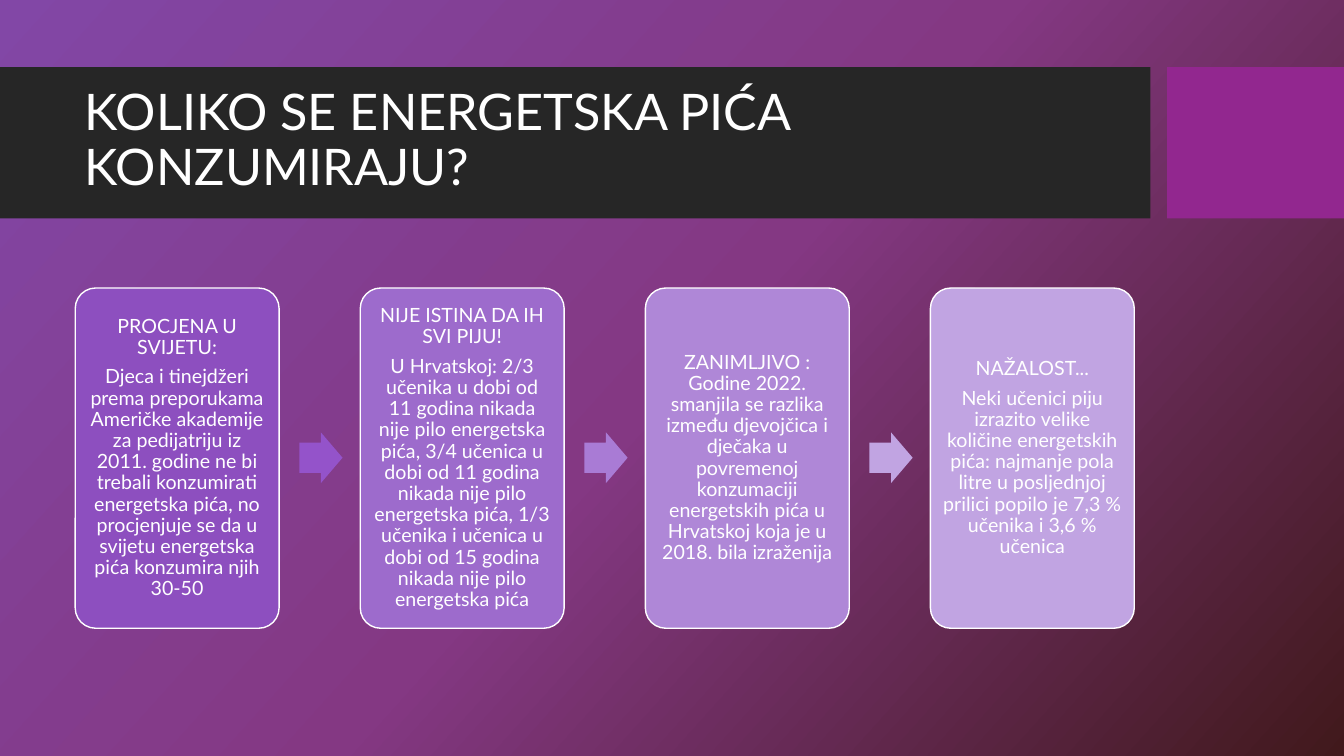
from copy import deepcopy

from pptx import Presentation
from pptx.dml.color import RGBColor
from pptx.enum.shapes import MSO_SHAPE
from pptx.enum.text import MSO_ANCHOR, MSO_AUTO_SIZE, PP_ALIGN
from pptx.oxml.ns import qn
from pptx.util import Inches, Pt

RECT, ROUND = MSO_SHAPE.RECTANGLE, MSO_SHAPE.ROUNDED_RECTANGLE
ARROW = MSO_SHAPE.RIGHT_ARROW
MIDDLE, FIXED = MSO_ANCHOR.MIDDLE, MSO_AUTO_SIZE.NONE
LEFT, CENTER = PP_ALIGN.LEFT, PP_ALIGN.CENTER

FIRST, PITCH, WIDE = 5.6, 21.21, 15.17
CARDS = [
    ("8D4FBF", ["PROCJENA U SVIJETU:",
                "Djeca i tinejdžeri prema preporukama Američke akademije za pedijatriju "
                "iz 2011. godine ne bi trebali konzumirati energetska pića, no procjenjuje "
                "se da u svijetu energetska pića konzumira njih 30-50"]),
    ("9D6BCC", ["NIJE ISTINA DA IH SVI PIJU!",
                "U Hrvatskoj: 2/3 učenika u dobi od 11 godina nikada nije pilo energetska "
                "pića, 3/4 učenica u dobi od 11 godina nikada nije pilo energetska pića, "
                "1/3 učenika i učenica u dobi od 15 godina nikada nije pilo energetska pića"]),
    ("AF87D7", ["ZANIMLJIVO : Godine 2022. smanjila se razlika između djevojčica i dječaka "
                "u povremenoj konzumaciji energetskih pića u Hrvatskoj koja je u 2018. "
                "bila izraženija"]),
    ("C1A4E2", ["NAŽALOST...",
                "Neki učenici piju izrazito velike količine energetskih pića: najmanje pola "
                "litre u posljednjoj prilici popilo je 7,3 % učenika i 3,6 % učenica"]),
]
ARROWS = ["9453CA", "A97BD5", "C1A4E2"]


def tint(code):
    return RGBColor.from_string(code)


class Deck:
    """Holds the style and the current slide; places are percent of its size."""

    font, ink = "Lato", "FFFFFF"

    def __init__(self):
        self.file = Presentation()
        self.file.slide_width, self.file.slide_height = Inches(13.33), Inches(7.5)
        self.slide = self.file.slides.add_slide(self.file.slide_layouts[5])

    def area(self, x, y, w, h):
        wide, high = self.file.slide_width, self.file.slide_height
        return [int(part * full / 100)
                for part, full in zip((x, y, w, h), (wide, high, wide, high))]

    def ground(self, angle, codes):
        fill = self.slide.background.fill
        fill.gradient()
        fill.gradient_angle = 360 - angle
        stops = next(self.slide.element.iter(qn("a:gsLst")))
        stops.insert(1, deepcopy(stops[0]))
        for i, (stop, code) in enumerate(zip(fill.gradient_stops, codes)):
            stop.color.rgb = tint(code)
            stop.position = i / (len(codes) - 1)

    def shape(self, kind, place, code, bends=()):
        item = self.slide.shapes.add_shape(kind, *self.area(*place))
        item.shadow.inherit = False
        item.fill.solid()
        item.fill.fore_color.rgb = tint(code)
        item.line.fill.background()
        for i, bend in enumerate(bends):
            item.adjustments[i] = bend
        return item

    def words(self, frame, lines, size, align):
        frame.text = "\n".join(lines)
        frame.word_wrap = True
        frame.auto_size = FIXED
        frame.vertical_anchor = MIDDLE
        for i, line in enumerate(frame.paragraphs):
            line.alignment = align
            line.line_spacing = 0.9
            line.space_before = Pt(6 if i else 0)
            for run in line.runs:
                run.font.name = self.font
                run.font.size = Pt(size)
                run.font.color.rgb = tint(self.ink)

    def title(self, text, place):
        head = self.slide.shapes.title
        head.left, head.top, head.width, head.height = self.area(*place)
        head.element.getparent().append(head.element)
        self.words(head.text_frame, [text], 36, LEFT)

    def card(self, place, code, lines):
        box = self.shape(ROUND, place, code, [0.1])
        box.line.color.rgb = tint(self.ink)
        box.line.width = Pt(1)
        frame = box.text_frame
        frame.margin_left = frame.margin_right = Inches(0.06)
        frame.margin_top = frame.margin_bottom = Inches(0.06)
        self.words(frame, lines, 14, CENTER)


def main():
    deck = Deck()
    deck.ground(42, ["8247A6", "843883", "41191C"])
    deck.shape(RECT, (0, 8.9, 85.6, 20), "262626")
    deck.shape(RECT, (86.85, 8.9, 13.15, 20), "92278F")
    deck.title("KOLIKO SE ENERGETSKA PIĆA KONZUMIRAJU?", (5.55, 10.9, 78.85, 15.7))
    for i, (code, lines) in enumerate(CARDS):
        deck.card((FIRST + i * PITCH, 38.1, WIDE, 45), code, lines)
    for i, code in enumerate(ARROWS):
        place = (FIRST + i * PITCH + WIDE + 1.5, 57.2, 3.22, 6.7)
        deck.shape(ARROW, place, code, [0.6, 0.5])
    deck.file.save("out.pptx")


if __name__ == "__main__":
    main()
